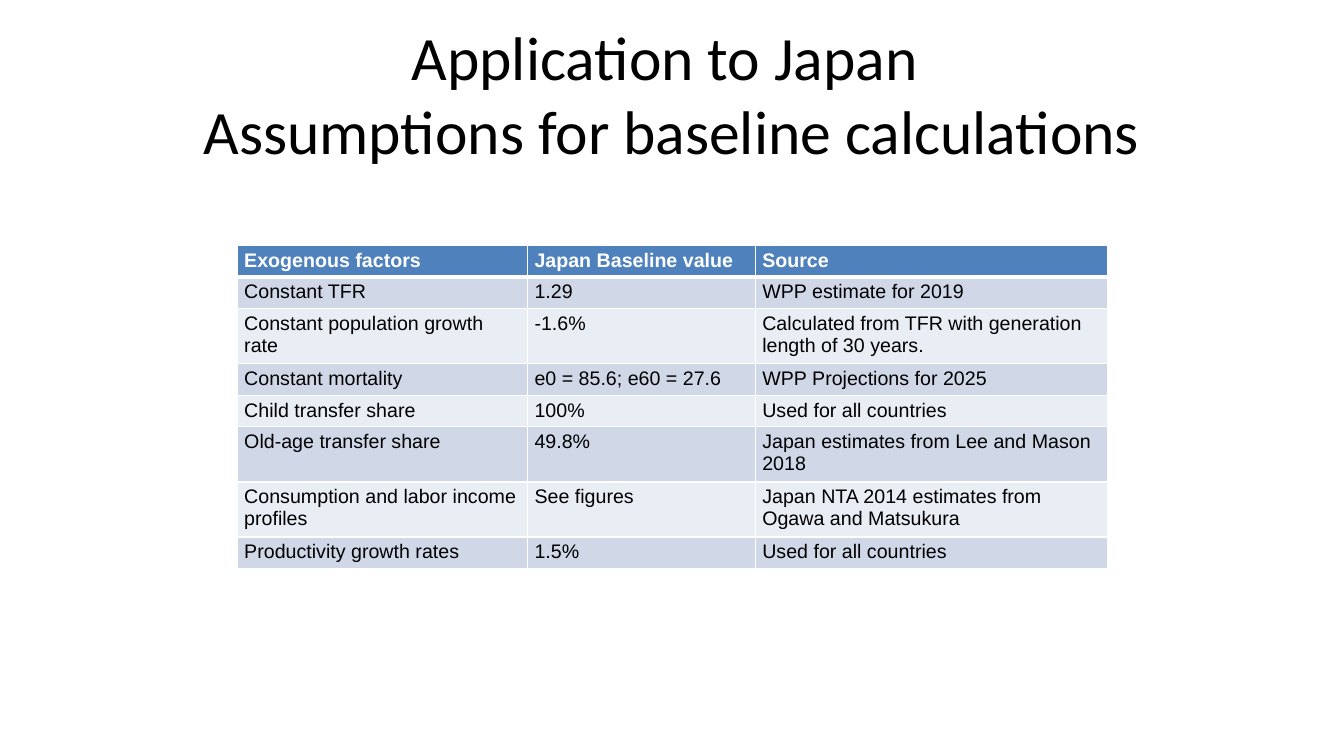
from dataclasses import dataclass

import pptx
import pptx.dml.color
import pptx.enum.text
import pptx.oxml.ns
import pptx.util
from lxml import etree

ALIGN = pptx.enum.text.PP_ALIGN
ANCHOR = pptx.enum.text.MSO_ANCHOR


@dataclass(frozen=True)
class Theme:
    title_font: str = "Calibri"
    table_font: str = "Arial"
    title_size: int = 44
    table_size: int = 14
    text: str = "000000"
    header_text: str = "FFFFFF"
    header_fill: str = "4F81BD"
    bands: tuple = ("D0D8E8", "E9EDF4")
    border: str = "FFFFFF"
    thin: int = 1
    thick: int = 3


TITLE = ["Application to Japan ", "Assumptions for baseline calculations"]
ASSUMPTIONS = [
    ("Exogenous factors", "Japan Baseline value", "Source"),
    ("Constant TFR", "1.29", "WPP estimate for 2019"),
    ("Constant population growth rate", "-1.6%",
     "Calculated from TFR with generation length of 30 years."),
    ("Constant mortality", "e0 = 85.6; e60 = 27.6", "WPP Projections for 2025"),
    ("Child transfer share", "100%", "Used for all countries"),
    ("Old-age transfer share", "49.8%", "Japan estimates from Lee and Mason 2018"),
    ("Consumption and labor income profiles", "See figures",
     "Japan NTA 2014 estimates from Ogawa and Matsukura"),
    ("Productivity growth rates", "1.5%", "Used for all countries"),
]
SINGLE_ROW, DOUBLE_ROW = 4.13, 7.2
DOUBLE_ROWS = {2, 6}


def apply_format(target, values):
    for name, value in values.items():
        setattr(target, name, value)


class Page:
    """A slide on a grid of 100 columns by 100 rows."""

    def __init__(self, deck, theme):
        self.theme = theme
        self.column = deck.slide_width / 100
        self.row = deck.slide_height / 100
        self.slide = deck.slides.add_slide(deck.slide_layouts[6])

    def across(self, columns):
        return round(columns * self.column)

    def down(self, rows):
        return round(rows * self.row)

    def place(self, left, top, width, height):
        return self.across(left), self.down(top), self.across(width), self.down(height)

    def style(self, font, name, size, color, bold=False):
        apply_format(font, {"name": name, "size": pptx.util.Pt(size), "bold": bold})
        font.color.rgb = pptx.dml.color.RGBColor.from_string(color)

    def title(self, lines, *area):
        frame = self.slide.shapes.add_textbox(*self.place(*area)).text_frame
        apply_format(frame, {"word_wrap": True, "vertical_anchor": ANCHOR.MIDDLE})
        para = frame.paragraphs[0]
        para.alignment = ALIGN.CENTER
        for number, line in enumerate(lines):
            if number:
                para.add_line_break()
            span = para.add_run()
            span.text = line
            self.style(span.font, self.theme.title_font, self.theme.title_size,
                       self.theme.text)

    def table(self, rows, left, top, widths, heights):
        area = self.place(left, top, sum(widths), sum(heights))
        table = self.slide.shapes.add_table(len(rows), len(widths), *area).table
        for column, width in zip(table.columns, widths):
            column.width = self.across(width)
        for number, (row, height) in enumerate(zip(table.rows, heights)):
            row.height = self.down(height)
            for cell, words in zip(row.cells, rows[number]):
                self.cell(cell, words, number)

    def cell(self, cell, words, number):
        theme, header = self.theme, number == 0
        side, edge = pptx.util.Inches(0.07), pptx.util.Inches(0.04)
        apply_format(cell, {"margin_left": side, "margin_right": side,
                            "margin_top": edge, "margin_bottom": edge})
        self.borders(cell, top=theme.thick if number == 1 else theme.thin,
                     bottom=theme.thick if header else theme.thin)
        cell.fill.solid()
        fill = theme.header_fill if header else theme.bands[(number - 1) % 2]
        cell.fill.fore_color.rgb = pptx.dml.color.RGBColor.from_string(fill)
        span = cell.text_frame.paragraphs[0].add_run()
        span.text = words
        self.style(span.font, theme.table_font, theme.table_size,
                   theme.header_text if header else theme.text, bold=header)

    def borders(self, cell, top, bottom):
        """Draw the four cell borders; call before the cell is filled."""
        name = pptx.oxml.ns.qn
        properties = cell._tc.get_or_add_tcPr()
        widths = {"L": self.theme.thin, "R": self.theme.thin, "T": top, "B": bottom}
        for side, width in widths.items():
            line = etree.SubElement(properties, name(f"a:ln{side}"),
                                    w=str(pptx.util.Pt(width)))
            fill = etree.SubElement(line, name("a:solidFill"))
            etree.SubElement(fill, name("a:srgbClr"), val=self.theme.border)


def main():
    deck = pptx.Presentation()
    deck.slide_width = pptx.util.Inches(13.33)
    deck.slide_height = pptx.util.Inches(7.5)
    page = Page(deck, Theme())
    page.title(TITLE, 5, 4, 90, 16.67)
    heights = [DOUBLE_ROW if number in DOUBLE_ROWS else SINGLE_ROW
               for number in range(len(ASSUMPTIONS))]
    page.table(ASSUMPTIONS, 17.65, 32.45, [21.6, 16.95, 26.2], heights)
    deck.save("out.pptx")


if __name__ == "__main__":
    main()
